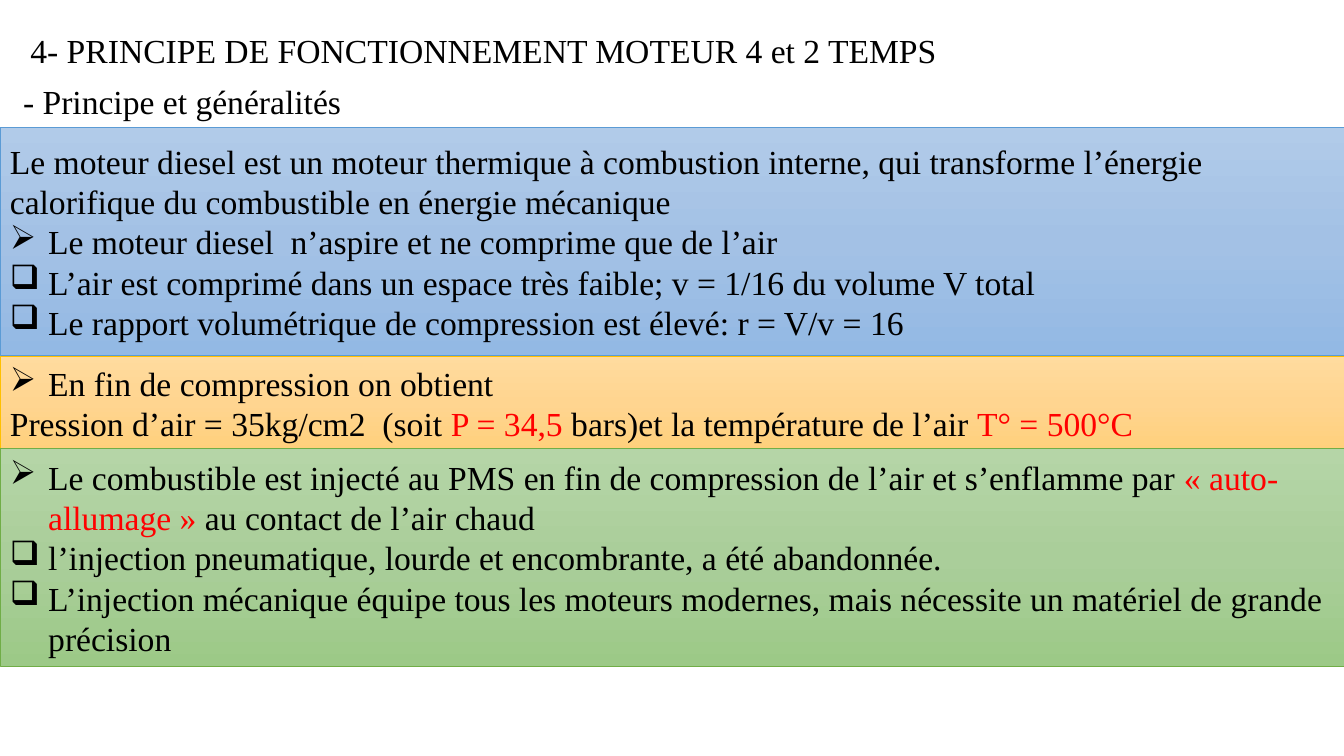
import copy
import pptx
import pptx.util
import pptx.dml.color
import pptx.enum.shapes
import pptx.enum.text
import pptx.oxml.ns
import lxml.etree

Inches = pptx.util.Inches
ALIGN = pptx.enum.text.PP_ALIGN

ARROW, BOX, PLAIN = "➢", "❑", None

HEADING = "4- PRINCIPE DE FONCTIONNEMENT MOTEUR 4 et 2 TEMPS"
SUBHEADING = "- Principe et généralités"

PANELS = [
    {
        "top": 1.26, "height": 2.27, "colours": "blue",
        "lines": [
            (PLAIN, [("Le moteur diesel est un moteur thermique à combustion interne, qui transforme "
                      "l’énergie calorifique du combustible en énergie mécanique", "text")]),
            (ARROW, [("Le moteur diesel  n’aspire et ne comprime que de l’air", "text")]),
            (BOX, [("L’air est comprimé dans un espace très faible; v = 1/16 du volume V total", "text")]),
            (BOX, [("Le rapport volumétrique de compression est élevé: r = V/v = 16", "text")]),
        ],
    },
    {
        "top": 3.54, "height": 0.92, "colours": "orange",
        "lines": [
            (ARROW, [("En fin de compression on obtient", "text")]),
            (PLAIN, [("Pression d’air = 35kg/cm2  (soit ", "text"), ("P = 34,5 ", "key"),
                     ("bars)et la température de l’air ", "text"), ("T° = 500°C", "key")]),
        ],
    },
    {
        "top": 4.45, "height": 2.16, "colours": "green",
        "lines": [
            (ARROW, [("Le combustible est injecté au PMS en fin de compression de l’air et "
                      "s’enflamme par ", "text"), ("« auto-allumage » ", "key"),
                     ("au contact de l’air chaud", "text")]),
            (BOX, [("l’injection pneumatique, lourde et encombrante, a été abandonnée.", "text")]),
            (BOX, [("L’injection mécanique équipe tous les moteurs modernes, mais nécessite "
                    "un matériel de grande précision", "text")]),
        ],
    },
]

THEME = {
    "font": {"name": "Times New Roman", "size": pptx.util.Pt(24), "bold": False},
    "text": "000000",
    "key": "FF0000",
    "paper": "FFFFFF",
    "blue": {"stops": ["B1CBE9", "A3C1E5", "93B9E4"], "line": "5B9BD5"},
    "orange": {"stops": ["FFDB9E", "FFD590", "FFD07C"], "line": "FFC000"},
    "green": {"stops": ["B5D5A7", "AACE9A", "9CC987"], "line": "70AD47"},
}
FRAME = {
    "word_wrap": True,
    "auto_size": pptx.enum.text.MSO_AUTO_SIZE.NONE,
    "vertical_anchor": pptx.enum.text.MSO_ANCHOR.MIDDLE,
    "margin_left": Inches(0.1), "margin_right": Inches(0.1),
    "margin_top": Inches(0.05), "margin_bottom": Inches(0.05),
}
INDENT = Inches(0.38)


def apply(target, values):
    for key, value in values.items():
        setattr(target, key, value)


def rgb(code):
    return pptx.dml.color.RGBColor.from_string(code)


def place(shape, left, top, width, height):
    apply(shape, {"left": Inches(left), "top": Inches(top),
                  "width": Inches(width), "height": Inches(height)})


def outline(shape, colour, weight):
    shape.line.color.rgb = rgb(colour)
    shape.line.width = pptx.util.Pt(weight)


def fill_paper(shape):
    shape.fill.solid()
    shape.fill.fore_color.rgb = rgb(THEME["paper"])
    outline(shape, THEME["paper"], 1)


def fill_gradient(shape, colours):
    shape.fill.gradient()
    shape.fill.gradient_angle = 270
    first = shape.fill.gradient_stops[0]
    stop_list = shape._element.spPr.find(".//" + pptx.oxml.ns.qn("a:gsLst"))
    stop_list.insert(1, copy.deepcopy(stop_list[0]))
    for index, (stop, colour) in enumerate(zip(shape.fill.gradient_stops, colours["stops"])):
        stop.position = index / 2
        stop.color.rgb = rgb(colour)
    outline(shape, colours["line"], 0.5)


def write(shape, lines, alignment=ALIGN.LEFT):
    frame = shape.text_frame
    apply(frame, FRAME)
    for index, (bullet, pieces) in enumerate(lines):
        paragraph = frame.add_paragraph() if index else frame.paragraphs[0]
        paragraph.alignment = alignment
        if bullet:
            properties = paragraph._p.get_or_add_pPr()
            properties.set("marL", str(INDENT))
            properties.set("indent", str(-INDENT))
            lxml.etree.SubElement(properties, pptx.oxml.ns.qn("a:buChar"), char=bullet)
        for text, tone in pieces:
            run = paragraph.add_run()
            run.text = text
            apply(run.font, THEME["font"])
            run.font.color.rgb = rgb(THEME[tone])


def add_box(slide, left, top, width, height):
    box = slide.shapes.add_shape(pptx.enum.shapes.MSO_SHAPE.RECTANGLE, 0, 0, 0, 0)
    place(box, left, top, width, height)
    box.shadow.inherit = False
    return box


def main():
    deck = pptx.Presentation()
    apply(deck, {"slide_width": Inches(13.33), "slide_height": Inches(7.5)})
    slide = deck.slides.add_slide(deck.slide_layouts[5])

    heading = slide.shapes.title
    place(heading, 0, 0, 9.59, 1)
    fill_paper(heading)
    write(heading, [(PLAIN, [(HEADING, "text")])], ALIGN.CENTER)

    subheading = add_box(slide, 0.13, 0.74, 3.48, 0.52)
    fill_paper(subheading)
    write(subheading, [(PLAIN, [(SUBHEADING, "text")])])

    for content in PANELS:
        panel = add_box(slide, 0, content["top"], 13.33, content["height"])
        fill_gradient(panel, THEME[content["colours"]])
        write(panel, content["lines"])

    deck.save("out.pptx")


if __name__ == "__main__":
    main()
